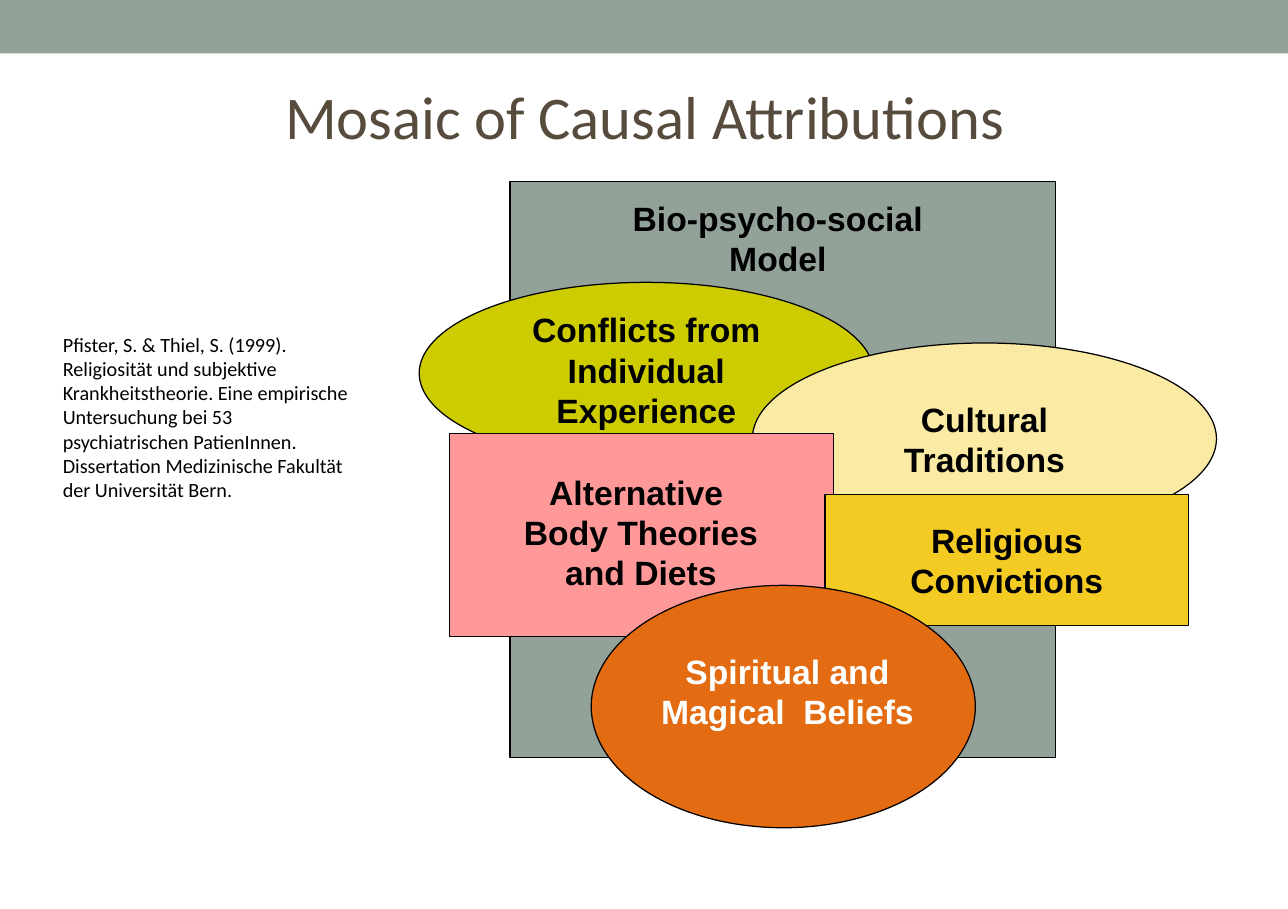
import pptx
import pptx.util
import pptx.dml.color
import pptx.enum.shapes
import pptx.enum.text

PX = 9144  # EMU per px, 100 px to the inch

COLORS = {
    "sage": "93A299",
    "brown": "564B3C",
    "olive": "CCCC00",
    "cream": "FAEAA4",
    "pink": "FF9999",
    "yellow": "F3CB23",
    "orange": "E36B11",
    "black": "000000",
    "white": "FFFFFF",
}
RECT = pptx.enum.shapes.MSO_SHAPE.RECTANGLE
OVAL = pptx.enum.shapes.MSO_SHAPE.OVAL
LEFT = pptx.enum.text.PP_ALIGN.LEFT
CENTER = pptx.enum.text.PP_ALIGN.CENTER


def add_block(kind, box, color, outlined=True):
    block = slide.shapes.add_shape(kind, *[n * PX for n in box])
    block.shadow.inherit = False
    block.fill.solid()
    block.fill.fore_color.rgb = pptx.dml.color.RGBColor.from_string(COLORS[color])
    if outlined:
        block.line.color.rgb = pptx.dml.color.RGBColor.from_string(COLORS["black"])
        block.line.width = pptx.util.Pt(0.75)
    else:
        block.line.fill.background()


def write(holder, text, font, size, color, align, bold=False):
    holder.text_frame.word_wrap = True
    paragraph = holder.text_frame.paragraphs[0]
    paragraph.text = text
    paragraph.alignment = align
    paragraph.font.name = font
    paragraph.font.size = pptx.util.Pt(size)
    paragraph.font.bold = bold
    paragraph.font.color.rgb = pptx.dml.color.RGBColor.from_string(COLORS[color])


deck = pptx.Presentation()
deck.slide_width, deck.slide_height = 1063 * PX, 750 * PX
slide = deck.slides.add_slide(deck.slide_layouts[5])

# Top band
add_block(RECT, (0, 0, 1063, 44), "sage", outlined=False)

# Title
title = slide.shapes.title
title.left, title.top, title.width, title.height = [n * PX for n in (80, 44, 904, 102)]
title.text_frame.vertical_anchor = pptx.enum.text.MSO_ANCHOR.MIDDLE
write(title, "Mosaic of Causal Attributions", "Calibri", 36, "brown", CENTER)

# Citation
citation = slide.shapes.add_textbox(*[n * PX for n in (42, 269, 257, 182)])
write(citation,
      "Pfister, S. & Thiel, S. (1999).\vReligiosität und subjektive "
      "Krankheitstheorie. Eine empirische Untersuchung bei 53 psychiatrischen "
      "PatienInnen. Dissertation Medizinische Fakultät der Universität Bern.",
      "Calibri", 12, "black", LEFT)

# Mosaic, back to front: kind, block, fill, label box, label, label colour
mosaic = [
    (RECT, (421, 150, 450, 475), "sage", (471, 158, 342, 77),
     "Bio-psycho-social\vModel", "black"),
    (OVAL, (346, 233, 375, 150), "olive", (392, 250, 283, 110),
     "Conflicts from\vIndividual\vExperience", "black"),
    (OVAL, (621, 283, 383, 158), "cream", (700, 324, 225, 77),
     "Cultural\vTraditions", "black"),
    (RECT, (371, 358, 317, 167), "pink", (400, 384, 258, 110),
     "Alternative \vBody Theories\vand Diets", "black"),
    (RECT, (681, 408, 300, 108), "yellow", (700, 424, 262, 77),
     "Religious\vConvictions", "black"),
    (OVAL, (488, 483, 317, 200), "orange", (521, 532, 258, 77),
     "Spiritual and\vMagical  Beliefs", "white"),
]
for kind, box, fill, label_box, label, label_color in mosaic:
    add_block(kind, box, fill)
    caption = slide.shapes.add_textbox(*[n * PX for n in label_box])
    write(caption, label, "Arial", 20, label_color, CENTER, bold=True)

deck.save("out.pptx")
